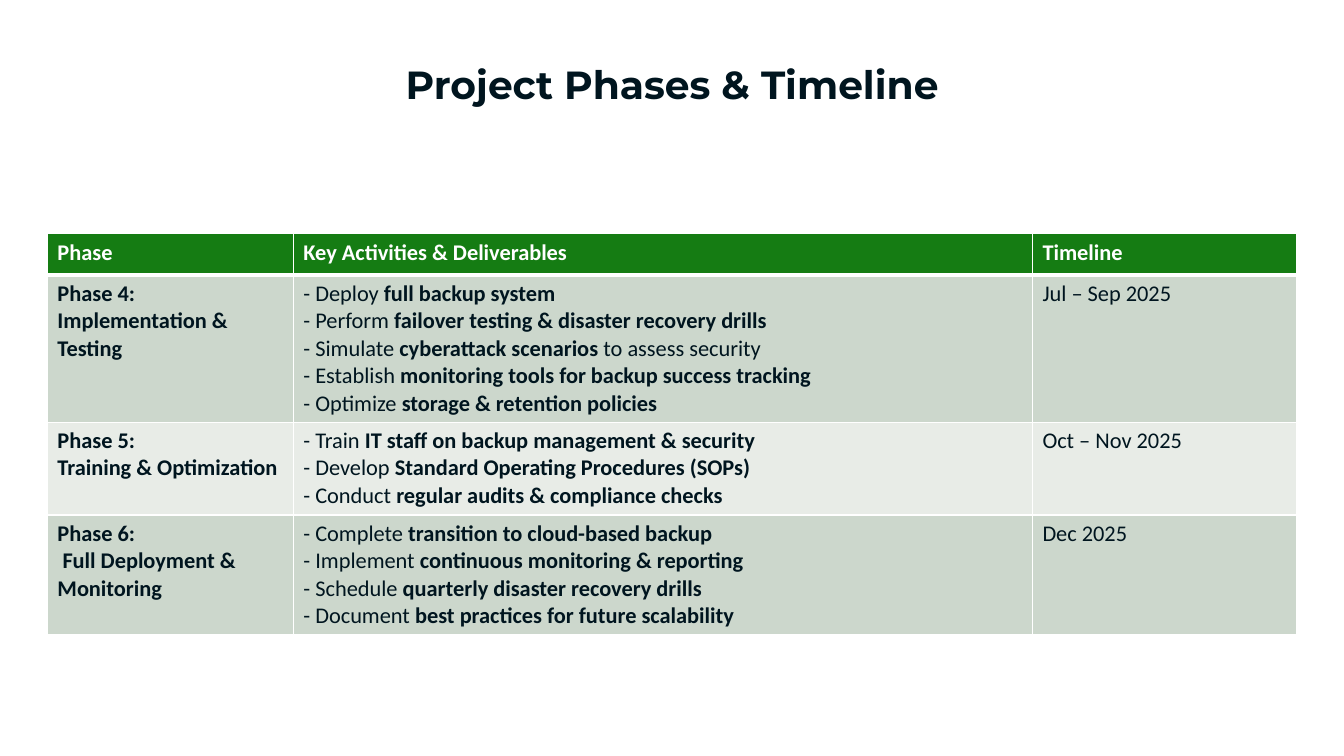
from lxml import etree
from pptx import Presentation
from pptx.dml.color import RGBColor
from pptx.enum.text import MSO_ANCHOR, MSO_AUTO_SIZE, PP_ALIGN
from pptx.oxml.ns import qn
from pptx.util import Inches, Pt

BOTTOM = MSO_ANCHOR.BOTTOM
CENTER = PP_ALIGN.CENTER
NO_AUTOFIT = MSO_AUTO_SIZE.NONE

INK = "00151F"
WHITE = "FFFFFF"
HEADER_GREEN = "157C13"
BAND_FILLS = ["CCD7CC", "E8ECE7"]

LEFT, WIDTH = 0.47, 12.39
COLUMN_WIDTHS = [2.44, 7.33, 2.62]
ROW_HEIGHTS = [0.41, 1.45, 0.92, 1.18]

HEADINGS = ["Phase", "Key Activities & Deliverables", "Timeline"]
PHASES = [
    (
        ["Phase 4:", "Implementation & Testing"],
        [
            ("- Deploy ", "full backup system", ""),
            ("- Perform ", "failover testing & disaster recovery drills", ""),
            ("- Simulate ", "cyberattack scenarios", " to assess security"),
            ("- Establish ", "monitoring tools for backup success tracking", ""),
            ("- Optimize ", "storage & retention policies", ""),
        ],
        "Jul – Sep 2025",
    ),
    (
        ["Phase 5:", "Training & Optimization"],
        [
            ("- Train ", "IT staff on backup management & security", ""),
            ("- Develop ", "Standard Operating Procedures (SOPs)", ""),
            ("- Conduct ", "regular audits & compliance checks", ""),
        ],
        "Oct – Nov 2025",
    ),
    (
        ["Phase 6:", " Full Deployment & Monitoring"],
        [
            ("- Complete ", "transition to cloud-based backup", ""),
            ("- Implement ", "continuous monitoring & reporting", ""),
            ("- Schedule ", "quarterly disaster recovery drills", ""),
            ("- Document ", "best practices for future scalability", ""),
        ],
        "Dec 2025",
    ),
]


def color(hex_value):
    return RGBColor.from_string(hex_value)


def format_run(run, font_name, size, hex_value, bold):
    run.font.name = font_name
    run.font.size = Pt(size)
    run.font.color.rgb = color(hex_value)
    run.font.bold = bold


def set_borders(cell, bottom_width):
    properties = cell._tc.get_or_add_tcPr()
    widths = {"a:lnL": 1, "a:lnR": 1, "a:lnT": 1, "a:lnB": bottom_width}
    for side, width in widths.items():
        border = etree.SubElement(properties, qn(side), w=str(Pt(width)))
        border_fill = etree.SubElement(border, qn("a:solidFill"))
        etree.SubElement(border_fill, qn("a:srgbClr"), val=WHITE)


def fill_cell(cell, lines, fill, ink=INK, bottom_width=1):
    set_borders(cell, bottom_width)
    cell.fill.solid()
    cell.fill.fore_color.rgb = color(fill)
    for index, line in enumerate(lines):
        frame = cell.text_frame
        paragraph = frame.paragraphs[0] if index == 0 else frame.add_paragraph()
        for text, bold in line:
            if text:
                run = paragraph.add_run()
                run.text = text
                format_run(run, "Calibri", 16, ink, bold)


def add_title(slide, left, top, width, height):
    title = slide.shapes.title
    title.left, title.top = Inches(left), Inches(top)
    title.width, title.height = Inches(width), Inches(height)
    frame = title.text_frame
    frame.text = "Project Phases & Timeline"
    frame.word_wrap = True
    frame.auto_size = NO_AUTOFIT
    frame.vertical_anchor = BOTTOM
    paragraph = frame.paragraphs[0]
    paragraph.alignment = CENTER
    paragraph.line_spacing = 0.9
    format_run(paragraph.runs[0], "Montserrat", 28, INK, True)


def add_timeline(slide, left, top, width, height):
    timeline = slide.shapes.add_table(
        len(PHASES) + 1, len(HEADINGS),
        Inches(left), Inches(top), Inches(width), Inches(height),
    ).table
    for column, share in zip(timeline.columns, COLUMN_WIDTHS):
        column.width = Inches(width * share / sum(COLUMN_WIDTHS))
    for row, share in zip(timeline.rows, ROW_HEIGHTS):
        row.height = Inches(height * share / sum(ROW_HEIGHTS))

    for column_index, heading in enumerate(HEADINGS):
        fill_cell(timeline.cell(0, column_index), [[(heading, True)]],
                  HEADER_GREEN, WHITE, bottom_width=3)

    for row_index, (phase, activities, dates) in enumerate(PHASES, start=1):
        row_lines = [
            [[(text, True)] for text in phase],
            [[(verb, False), (subject, True), (ending, False)]
             for verb, subject, ending in activities],
            [[(dates, False)]],
        ]
        band = BAND_FILLS[(row_index - 1) % len(BAND_FILLS)]
        for column_index, lines in enumerate(row_lines):
            fill_cell(timeline.cell(row_index, column_index), lines, band)


def main():
    presentation = Presentation()
    presentation.slide_width = Inches(13.33)
    presentation.slide_height = Inches(7.5)
    slide = presentation.slides.add_slide(presentation.slide_layouts[5])
    add_title(slide, LEFT, 0.4, WIDTH, 0.72)
    add_timeline(slide, LEFT, 2.32, WIDTH, sum(ROW_HEIGHTS))
    presentation.save("out.pptx")


if __name__ == "__main__":
    main()
